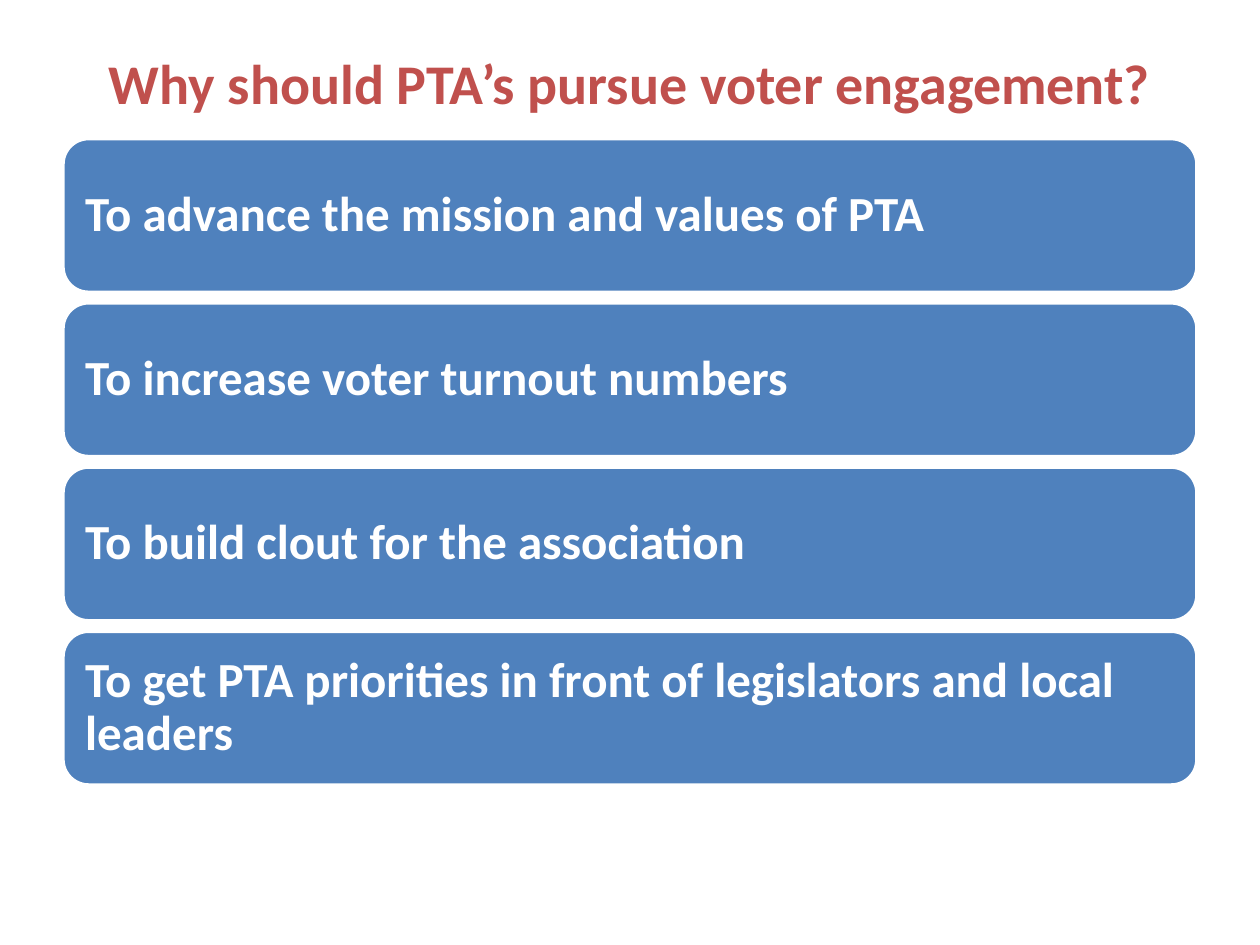
from pptx import Presentation
from pptx.dml.color import RGBColor
from pptx.enum.shapes import MSO_SHAPE
from pptx.enum.text import MSO_ANCHOR, PP_ALIGN
from pptx.util import Pt

RED, BLUE, WHITE = "C0504D", "4F81BD", "FFFFFF"
GOALS = [
    "To advance the mission and values of PTA",
    "To increase voter turnout numbers",
    "To build clout for the association",
    "To get PTA priorities in front of legislators and local leaders",
]


def tint(code):
    return RGBColor.from_string(code)


def write(shape, text, size, color, align=PP_ALIGN.LEFT, lead=1.0, inset=None):
    frame = shape.text_frame
    frame.word_wrap = True
    frame.vertical_anchor = MSO_ANCHOR.MIDDLE
    if inset is not None:
        frame.margin_left = frame.margin_right = Pt(inset)
        frame.margin_top = frame.margin_bottom = Pt(inset)
    para = frame.paragraphs[0]
    para.alignment = align
    para.line_spacing = lead
    run = para.add_run()
    run.text = text
    font = run.font
    font.name, font.size, font.bold = "Calibri", Pt(size), True
    font.color.rgb = tint(color)


def add_title(slide, text, left, top, width, height):
    title = slide.shapes.title
    title.left, title.top = Pt(left), Pt(top)
    title.width, title.height = Pt(width), Pt(height)
    write(title, text, size=32, color=RED, align=PP_ALIGN.CENTER)


def add_bars(slide, items, left, top, width, height, gap=6):
    """Stack one rounded bar per item, evenly filling the box."""
    group = slide.shapes.add_group_shape()
    tall = (height - gap * (len(items) - 1)) / len(items)
    for row, text in enumerate(items):
        bar = group.shapes.add_shape(
            MSO_SHAPE.ROUNDED_RECTANGLE,
            Pt(left), Pt(top + row * (tall + gap)), Pt(width), Pt(tall))
        bar.shadow.inherit = False
        bar.fill.solid()
        bar.fill.fore_color.rgb = tint(BLUE)
        bar.line.color.rgb = tint(WHITE)
        bar.line.width = Pt(2)
        write(bar, text, size=28, color=WHITE, lead=0.9, inset=8.4)


def main():
    deck = Presentation()
    deck.slide_width, deck.slide_height = Pt(720), Pt(540)
    slide = deck.slides.add_slide(deck.slide_layouts[5])
    add_title(slide, "Why should PTA’s pursue voter engagement?",
              left=36, top=21.6, width=648, height=51)
    add_bars(slide, GOALS, left=36, top=79.2, width=648, height=369.4)
    deck.save("out.pptx")


if __name__ == "__main__":
    main()
